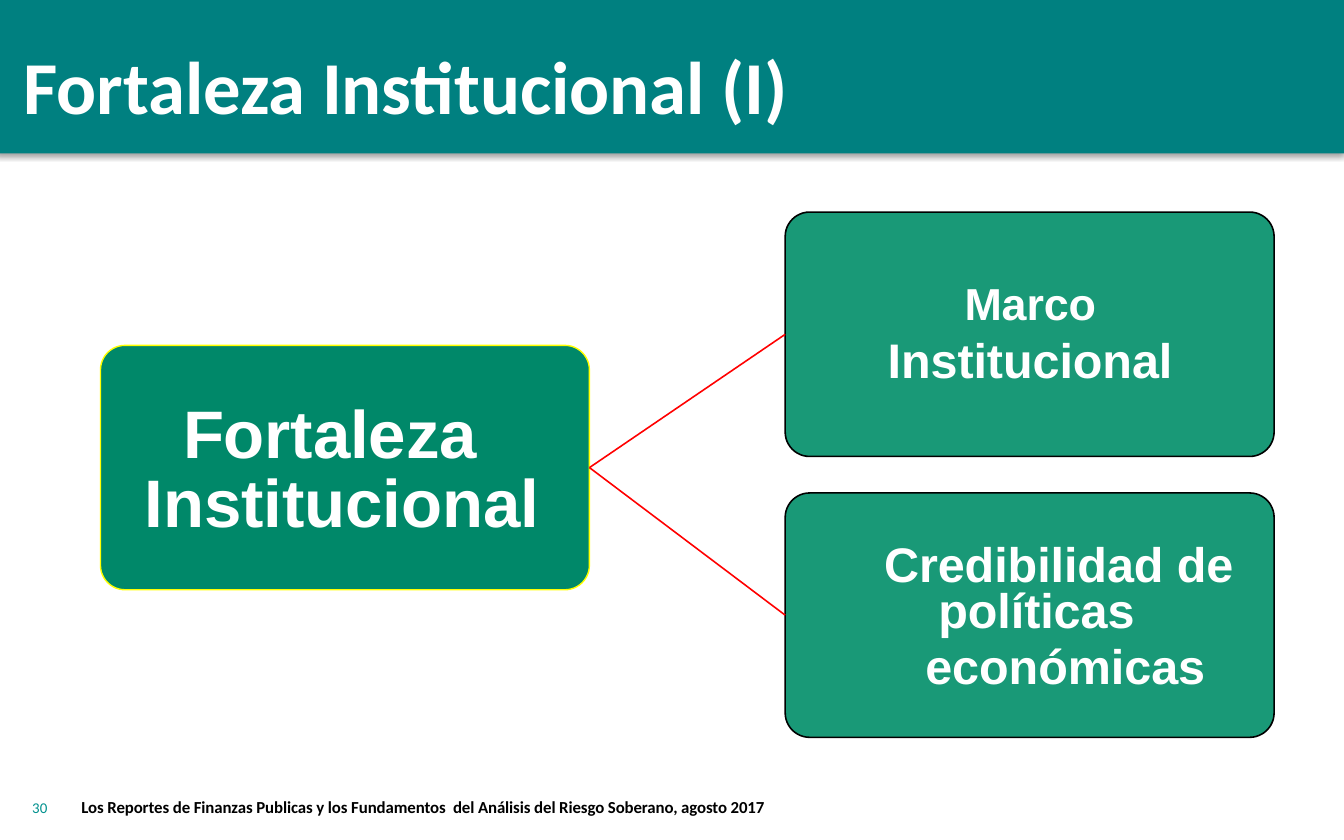
from lxml import etree
from pptx import Presentation
from pptx.dml.color import RGBColor
from pptx.enum.shapes import MSO_CONNECTOR, MSO_SHAPE
from pptx.enum.text import PP_ALIGN
from pptx.oxml.ns import qn
from pptx.util import Cm, Pt

RECTANGLE = MSO_SHAPE.RECTANGLE
ROUNDED = MSO_SHAPE.ROUNDED_RECTANGLE
STRAIGHT = MSO_CONNECTOR.STRAIGHT
LEFT, CENTER = PP_ALIGN.LEFT, PP_ALIGN.CENTER
LEFT_SITE, RIGHT_SITE = 1, 3

TEAL = RGBColor(0x00, 0x80, 0x80)
PAGE_TEAL = RGBColor(0x00, 0x91, 0x8E)
ROOT_GREEN = RGBColor(0x00, 0x88, 0x69)
BRANCH_GREEN = RGBColor(0x19, 0x99, 0x77)
YELLOW = RGBColor(0xFF, 0xFF, 0x00)
RED = RGBColor(0xFF, 0x00, 0x00)
BLACK = RGBColor(0x00, 0x00, 0x00)
WHITE = RGBColor(0xFF, 0xFF, 0xFF)

HEADER = (-0.1, -0.05, 25.5, 2.95)
NODE_WIDTH, NODE_HEIGHT = 9.24, 4.62
ROOT_LEFT, ROOT_TOP = 1.9, 6.53
BRANCH_LEFT, BRANCH_TOPS = 14.84, (4.01, 9.32)

TEXTS = [
    dict(box=(0.61, 15.09, 1.2, 0.5), font="Calibri", color=PAGE_TEAL, bold=False,
         paragraphs=[[("30", 8)]]),
    dict(box=(0.45, 0.75, 19.05, 1.75), font="Calibri", color=WHITE,
         paragraphs=[[("Fortaleza Institucional (I)", 40)]]),
    dict(box=(2.74, 7.6, 7.82, 2.64), font="Arial", color=WHITE,
         indents=[0.72], line=37.3,
         paragraphs=[[("Fortaleza Institucional", 36)]]),
    dict(box=(15.9, 5.22, 7.14, 2.2), font="Arial", color=WHITE, align=CENTER,
         paragraphs=[[("Marco ", 24), ("Institucional", 26)]]),
    dict(box=(15.49, 10.31, 7.92, 2.85), font="Arial", color=WHITE, align=CENTER,
         margin=0.28, indents=[0.84, 1.09], line=25, before=5,
         paragraphs=[[("Credibilidad de políticas", 26)], [("económicas", 26)]]),
    dict(box=(1.54, 14.99, 14.6, 0.5), font="Calibri", color=BLACK, line=13,
         paragraphs=[[("Los Reportes de Finanzas Publicas y los Fundamentos  del "
                       "Análisis del Riesgo Soberano, agosto 2017", 9)]]),
]


def add_box(slide, kind, box, fill, outline=None, weight=0.85):
    shape = slide.shapes.add_shape(kind, *map(Cm, box))
    shape.shadow.inherit = False
    shape.fill.solid()
    shape.fill.fore_color.rgb = fill
    if outline is None:
        shape.line.fill.background()
    else:
        shape.line.color.rgb = outline
        shape.line.width = Pt(weight)
    return shape


def add_header(slide):
    header = add_box(slide, RECTANGLE, HEADER, TEAL)
    effects = header._element.spPr.find(qn("a:effectLst"))
    shadow = etree.SubElement(effects, qn("a:outerShdw"), blurRad=str(Pt(3.1)),
                              dist=str(Pt(1.6)), dir="5400000", rotWithShape="0")
    black = etree.SubElement(shadow, qn("a:srgbClr"), val=str(BLACK))
    etree.SubElement(black, qn("a:alpha"), val="38000")


def add_node(slide, left, top, fill, outline, weight):
    node = add_box(slide, ROUNDED, (left, top, NODE_WIDTH, NODE_HEIGHT),
                   fill, outline, weight)
    node.adjustments[0] = 0.1
    return node


def add_link(slide, root, branch):
    link = slide.shapes.add_connector(STRAIGHT, 0, 0, 0, 0)
    link.begin_connect(root, RIGHT_SITE)
    link.end_connect(branch, LEFT_SITE)
    link.line.color.rgb = RED
    link.line.width = Pt(0.85)
    etree.SubElement(link._element.spPr, qn("a:effectLst"))


def add_text(slide, box, font, color, paragraphs, bold=True, align=LEFT,
             margin=0, indents=None, line=None, before=0):
    frame = slide.shapes.add_textbox(*map(Cm, box)).text_frame
    frame.word_wrap = True
    frame.margin_left = frame.margin_right = 0
    frame.margin_top = frame.margin_bottom = 0
    for index, runs in enumerate(paragraphs):
        paragraph = frame.add_paragraph() if index else frame.paragraphs[0]
        paragraph.alignment = align
        if indents:
            properties = paragraph._p.get_or_add_pPr()
            properties.set("marL", str(Cm(margin)))
            properties.set("indent", str(Cm(indents[index])))
        if line:
            paragraph.line_spacing = Pt(line)
        if index:
            paragraph.space_before = Pt(before)
        for words, size in runs:
            run = paragraph.add_run()
            run.text = words
            run.font.name = font
            run.font.size = Pt(size)
            run.font.bold = bold
            run.font.color.rgb = color
            if bold:
                run._r.get_or_add_rPr().set("spc", "-5")


def main():
    deck = Presentation()
    deck.slide_width, deck.slide_height = Cm(25.4), Cm(15.88)
    slide = deck.slides.add_slide(deck.slide_layouts[6])
    add_header(slide)
    root = add_node(slide, ROOT_LEFT, ROOT_TOP, ROOT_GREEN, YELLOW, 0.75)
    for top in BRANCH_TOPS:
        branch = add_node(slide, BRANCH_LEFT, top, BRANCH_GREEN, BLACK, 0.85)
        add_link(slide, root, branch)
    for text in TEXTS:
        add_text(slide, **text)
    deck.save("out.pptx")


if __name__ == "__main__":
    main()
